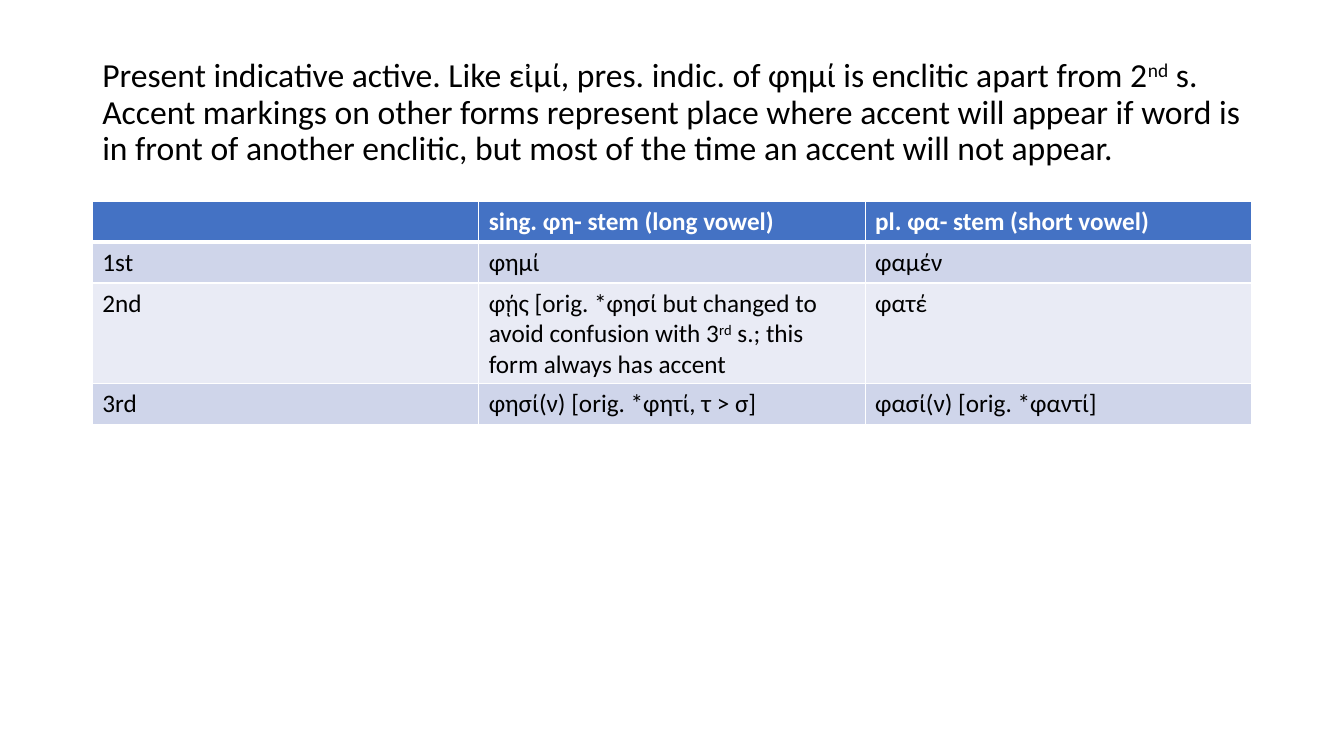
import lxml.etree
import pptx
import pptx.dml.color
import pptx.enum.text
import pptx.oxml.ns
import pptx.util

Pt = pptx.util.Pt
FONT = "Calibri"
COLOURS = {
    "text": "000000",
    "header": "4472C4",
    "header_text": "FFFFFF",
    "odd_row": "CFD5EA",
    "even_row": "E9EBF5",
    "border": "FFFFFF",
}
ROW_HEIGHT = 29.2

# Texts are lists of (wording, is superscript) where a superscript occurs.
HEADING = [
    ("Present indicative active. Like εἰμί, pres. indic. of φημί is enclitic apart from 2", False),
    ("nd", True),
    (" s. Accent markings on other forms represent place where accent will appear if word is "
     "in front of another enclitic, but most of the time an accent will not appear.", False),
]
SECOND_SINGULAR = [
    ("φῄς [orig. *φησί but changed to avoid confusion with 3", False),
    ("rd", True),
    (" s.; this form always has accent", False),
]
FORMS = [
    ["", "sing. φη- stem (long vowel)", "pl. φα- stem (short vowel)"],
    ["1st", "φημί", "φαμέν"],
    ["2nd", SECOND_SINGULAR, "φατέ"],
    ["3rd", "φησί(ν) [orig. *φητί, τ > σ]", "φασί(ν) [orig. *φαντί]"],
]


def rgb(name):
    return pptx.dml.color.RGBColor.from_string(COLOURS[name])


def write(para, text, size, colour, bold=False):
    """Fill a paragraph with a string or with (wording, is superscript) pairs."""
    para.font.name = FONT
    para.font.size = Pt(size)
    para.font.bold = bold
    para.font.color.rgb = rgb(colour)
    pieces = [(text, False)] if isinstance(text, str) else text
    for wording, superscript in pieces:
        if wording:
            span = para.add_run()
            span.text = wording
            if superscript:
                span.font._element.set("baseline", "30000")


def set_borders(cell, top, bottom):
    """Draw the four cell borders; top and bottom widths are in points."""
    properties = cell._tc.get_or_add_tcPr()
    widths = {"lnL": 1, "lnR": 1, "lnT": top, "lnB": bottom}
    for position, (side, width) in enumerate(widths.items()):
        line = lxml.etree.Element(pptx.oxml.ns.qn(f"a:{side}"), w=str(Pt(width)))
        fill = lxml.etree.SubElement(line, pptx.oxml.ns.qn("a:solidFill"))
        lxml.etree.SubElement(fill, pptx.oxml.ns.qn("a:srgbClr"), val=COLOURS["border"])
        properties.insert(position, line)


def add_heading(page, left, top, width, height):
    box = page.shapes.add_textbox(Pt(left), Pt(top), Pt(width), Pt(height))
    frame = box.text_frame
    frame.word_wrap = True
    frame.vertical_anchor = pptx.enum.text.MSO_ANCHOR.MIDDLE
    para = frame.paragraphs[0]
    para.line_spacing = 0.9
    write(para, HEADING, 24, "text")


def add_forms_table(page, left, top, width):
    height = ROW_HEIGHT * len(FORMS)
    table = page.shapes.add_table(
        len(FORMS), len(FORMS[0]), Pt(left), Pt(top), Pt(width), Pt(height)).table
    for column in table.columns:
        column.width = Pt(width / len(FORMS[0]))
    for index, texts in enumerate(FORMS):
        table.rows[index].height = Pt(ROW_HEIGHT)
        header = index == 0
        fill = "header" if header else "odd_row" if index % 2 else "even_row"
        for cell, text in zip(table.rows[index].cells, texts):
            cell.fill.solid()
            cell.fill.fore_color.rgb = rgb(fill)
            set_borders(cell, top=3 if index == 1 else 1, bottom=3 if header else 1)
            colour = "header_text" if header else "text"
            write(cell.text_frame.paragraphs[0], text, 18, colour, bold=header)


def main():
    deck = pptx.Presentation()
    deck.slide_width, deck.slide_height = Pt(960), Pt(540)
    page = deck.slides.add_slide(deck.slide_layouts[6])
    add_heading(page, 66, 28.75, 828, 104.4)
    add_forms_table(page, 66, 143.75, 828)
    deck.save("out.pptx")


if __name__ == "__main__":
    main()
